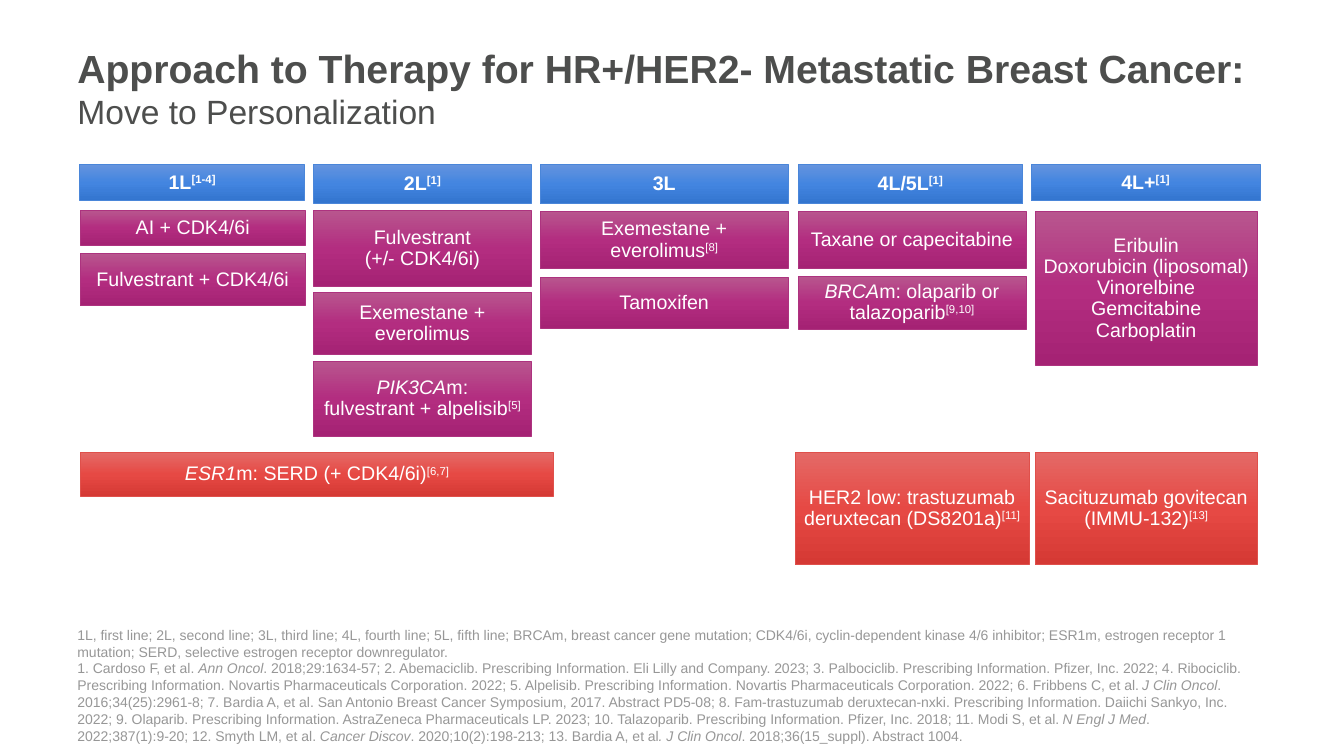
from copy import deepcopy

from pptx import Presentation
from pptx.dml.color import RGBColor
from pptx.enum.shapes import MSO_SHAPE
from pptx.enum.text import MSO_ANCHOR, PP_ALIGN
from pptx.oxml.ns import qn
from pptx.util import Pt

COLORS = {
    "title": "4D4E4D", "note": "979797", "text": "FFFFFF",
    "blue": ("6594DE", "4385E0", "3375CF", "4A86D9"),
    "plum": ("B8568E", "B32D80", "A52274", "AD337F"),
    "red": ("E46966", "E64944", "D53934", "DF504B"),
}


def write(para, text, color, **looks):
    """Add runs to para: *marks* give italics, ^marks^ give superscript."""
    for i, chunk in enumerate(text.split("*")):
        for j, part in enumerate(chunk.split("^")):
            if not part:
                continue
            run = para.add_run()
            run.text = part
            run.font.color.rgb = RGBColor.from_string(COLORS[color])
            for name, value in {"name": "Arial", "italic": i % 2 == 1, **looks}.items():
                setattr(run.font, name, value)
            if j % 2:
                run.font._element.set("baseline", "30000")


def add_box(left, top, width, height, text, hue, bold=False):
    box = slide.shapes.add_shape(
        MSO_SHAPE.RECTANGLE, Pt(left), Pt(top), Pt(width), Pt(height))
    box.shadow.inherit = False
    box.fill.gradient()
    box.fill.gradient_angle = 270
    stops = box._element.spPr.find(".//" + qn("a:gsLst"))
    stops.insert(1, deepcopy(stops[0]))
    *shades, edge = COLORS[hue]
    for stop, place, shade in zip(box.fill.gradient_stops, (0, 0.5, 1), shades):
        stop.position = place
        stop.color.rgb = RGBColor.from_string(shade)
    box.line.color.rgb = RGBColor.from_string(edge)
    box.line.width = Pt(0.5)
    frame = box.text_frame
    looks = {"word_wrap": True, "vertical_anchor": MSO_ANCHOR.MIDDLE,
             "margin_left": Pt(4.3), "margin_right": Pt(4.3),
             "margin_top": Pt(2.2), "margin_bottom": Pt(2.2)}
    for name, value in looks.items():
        setattr(frame, name, value)
    for i, line in enumerate(text.split("\n")):
        para = frame.add_paragraph() if i else frame.paragraphs[0]
        para.alignment = PP_ALIGN.CENTER
        para.line_spacing = 0.9
        write(para, line, "text", size=Pt(14), bold=bold)


deck = Presentation()
deck.slide_width, deck.slide_height = Pt(960), Pt(540)
slide = deck.slides.add_slide(deck.slide_layouts[6])

# Title
title = slide.shapes.add_textbox(Pt(48.2), Pt(16), Pt(870), Pt(93.5)).text_frame
title.word_wrap = True
title.vertical_anchor = MSO_ANCHOR.MIDDLE
head = title.paragraphs[0]
write(head, "Approach to Therapy for HR+/HER2- Metastatic Breast Cancer: ",
      "title", size=Pt(28), bold=True)
write(head, "Move to Personalization", "title", size=Pt(24), bold=False)

# Lines of therapy: left, width, height and label of the header,
# then left and width of its options, each with top, height and text
LINES = [
    (57, 160.5, 26, "1L^[1-4]^", 57.5, 160.5, [
        (150.5, 24.5, "AI + CDK4/6i"),
        (181, 37.5, "Fulvestrant + CDK4/6i")]),
    (224, 155.5, 27.5, "2L^[1]^", 224, 155.5, [
        (150.5, 54, "Fulvestrant\n(+/- CDK4/6i)"),
        (209, 44, "Exemestane + everolimus"),
        (258, 53.5, "*PIK3CA*m:\nfulvestrant + alpelisib^[5]^")]),
    (386, 177, 28, "3L", 386, 177, [
        (151, 41, "Exemestane + everolimus^[8]^"),
        (198, 36.5, "Tamoxifen")]),
    (570, 160.5, 28, "4L/5L^[1]^", 570, 163, [
        (151, 41, "Taxane or capecitabine"),
        (197.5, 37.5, "*BRCA*m: olaparib or talazoparib^[9,10]^")]),
    (736.5, 163.5, 26, "4L+^[1]^", 739.5, 158.5, [
        (151, 110, "Eribulin\nDoxorubicin (liposomal)\nVinorelbine\n"
                   "Gemcitabine\nCarboplatin")]),
]
for left, width, height, label, inset, span, options in LINES:
    add_box(left, 117.5, width, height, label, "blue", bold=True)
    for top, tall, text in options:
        add_box(inset, top, span, tall, text, "plum")

# Emerging options
EMERGING = [
    (57.5, 338, 31, "*ESR1*m: SERD (+ CDK4/6i)^[6,7]^"),
    (568, 167, 80, "HER2 low: trastuzumab deruxtecan (DS8201a)^[11]^"),
    (739.5, 158.5, 80, "Sacituzumab govitecan\n(IMMU-132)^[13]^"),
]
for left, width, height, text in EMERGING:
    add_box(left, 323.5, width, height, text, "red")

# Abbreviations and references
TERMS = [
    "1L, first line", "2L, second line", "3L, third line", "4L, fourth line",
    "5L, fifth line", "BRCAm, breast cancer gene mutation",
    "CDK4/6i, cyclin-dependent kinase 4/6 inhibitor",
    "ESR1m, estrogen receptor 1 mutation",
    "SERD, selective estrogen receptor downregulator.",
]
REFS = [
    "Cardoso F, et al. *Ann Oncol*. 2018;29:1634-57",
    "Abemaciclib. Prescribing Information. Eli Lilly and Company. 2023",
    "Palbociclib. Prescribing Information. Pfizer, Inc. 2022",
    "Ribociclib. Prescribing Information. Novartis Pharmaceuticals Corporation. 2022",
    "Alpelisib. Prescribing Information. Novartis Pharmaceuticals Corporation. 2022",
    "Fribbens C, et al. *J Clin Oncol*. 2016;34(25):2961-8",
    "Bardia A, et al. San Antonio Breast Cancer Symposium, 2017. Abstract PD5-08",
    "Fam-trastuzumab deruxtecan-nxki. Prescribing Information. Daiichi Sankyo, Inc. 2022",
    "Olaparib. Prescribing Information. AstraZeneca Pharmaceuticals LP. 2023",
    "Talazoparib. Prescribing Information. Pfizer, Inc. 2018",
    "Modi S, et al. *N Engl J Med*. 2022;387(1):9-20",
    "Smyth LM, et al. *Cancer Discov*. 2020;10(2):198-213",
    "Bardia A, et al*. J Clin Oncol*. 2018;36(15_suppl). Abstract 1004.",
]
notes = slide.shapes.add_textbox(Pt(48.2), Pt(419), Pt(846), Pt(116)).text_frame
notes.word_wrap = True
notes.vertical_anchor = MSO_ANCHOR.BOTTOM
cited = [f"{n}. {ref}" for n, ref in enumerate(REFS, 1)]
for i, items in enumerate((TERMS, cited)):
    para = notes.add_paragraph() if i else notes.paragraphs[0]
    write(para, "; ".join(items), "note", size=Pt(10))

deck.save("out.pptx")
